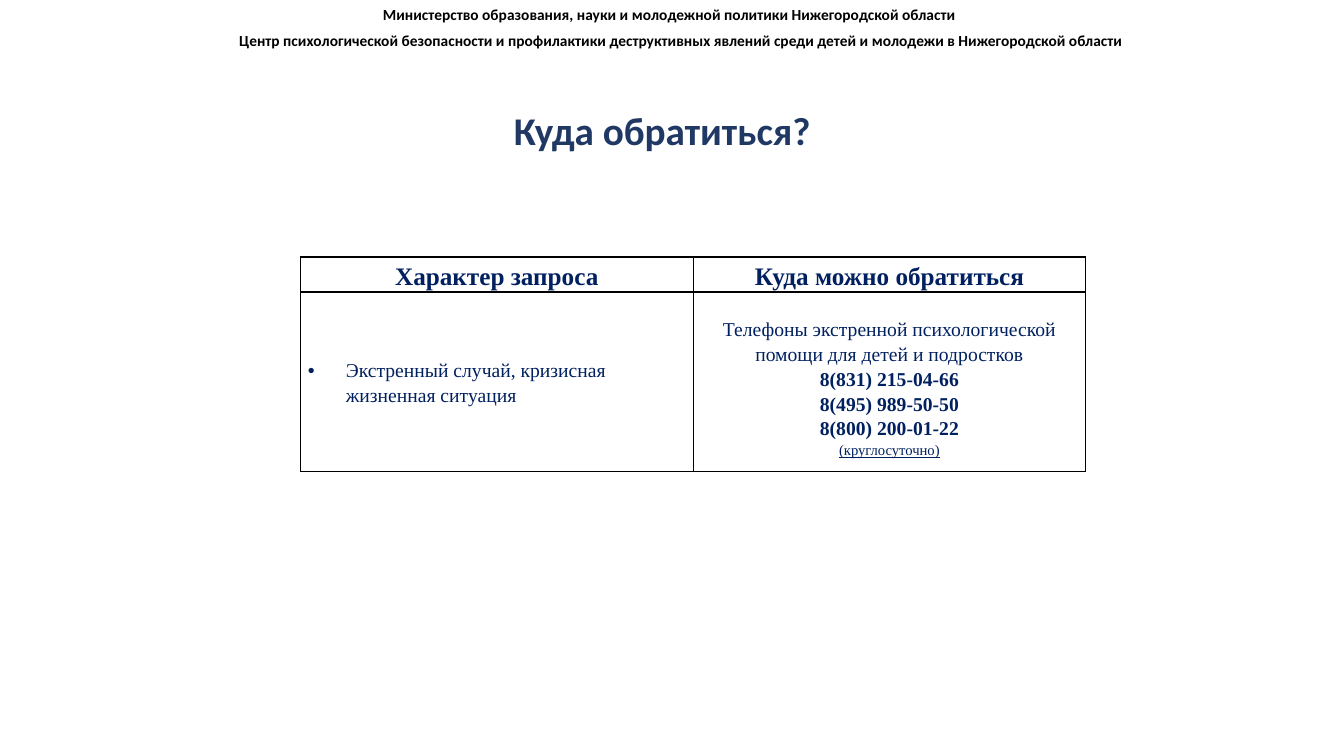
from lxml import etree
from pptx import Presentation
from pptx.dml.color import RGBColor
from pptx.enum.text import MSO_ANCHOR as Anchor, MSO_AUTO_SIZE as AutoSize, PP_ALIGN as Align
from pptx.oxml.ns import qn
from pptx.util import Pt

NAVY = "002060"
TITLE_BLUE = "203864"
BLACK = "000000"


def colour(hex_code):
    return RGBColor.from_string(hex_code)


def write(paragraph, text, font="Calibri", size=11, color=BLACK, bold=False,
          underline=False, align=None, spacing=None):
    paragraph.alignment = align
    paragraph.line_spacing = spacing
    run = paragraph.add_run()
    run.text = text
    run.font.name = font
    run.font.size = Pt(size)
    run.font.bold = bold
    run.font.underline = underline
    run.font.color.rgb = colour(color)


def write_cell(paragraph, text, size=14, align=Align.CENTER, **style):
    write(paragraph, text, font="Times New Roman", size=size, color=NAVY,
          align=align, spacing=1.15, **style)


def add_bullet(paragraph, indent):
    """Give the paragraph a round bullet with a hanging indent in points."""
    props = paragraph._p.get_or_add_pPr()
    props.set("marL", str(Pt(indent)))
    props.set("indent", str(-Pt(indent)))
    etree.SubElement(props, qn("a:buFont"), typeface="Arial")
    etree.SubElement(props, qn("a:buChar"), char="•")


def outline_cell(cell, color=BLACK, width=1):
    props = cell._tc.get_or_add_tcPr()
    for place, side in enumerate(("lnL", "lnR", "lnT", "lnB")):
        line = etree.Element(qn(f"a:{side}"), w=str(Pt(width)))
        fill = etree.SubElement(line, qn("a:solidFill"))
        etree.SubElement(fill, qn("a:srgbClr"), val=color)
        props.insert(place, line)


def add_header_line(slide, text, left, top, width, height):
    box = slide.shapes.add_textbox(Pt(left), Pt(top), Pt(width), Pt(height))
    box.text_frame.word_wrap = True
    box.text_frame.auto_size = AutoSize.SHAPE_TO_FIT_TEXT
    write(box.text_frame.paragraphs[0], text, bold=True)


def add_title(slide, text, left, top, width, height):
    title = slide.shapes.title
    title.left, title.top, title.width, title.height = map(Pt, (left, top, width, height))
    frame = title.text_frame
    frame.word_wrap = False
    frame.auto_size = AutoSize.NONE
    frame.vertical_anchor = Anchor.TOP
    write(frame.paragraphs[0], text, size=28, color=TITLE_BLUE, bold=True, align=Align.CENTER)


def add_contacts(slide, left, top, width, height, heading_height=25):
    table = slide.shapes.add_table(2, 2, Pt(left), Pt(top), Pt(width), Pt(height)).table
    table.first_row = table.horz_banding = False
    for column in table.columns:
        column.width = Pt(width / 2)
    table.rows[0].height = Pt(heading_height)
    table.rows[1].height = Pt(height - heading_height)
    for cell in table.iter_cells():
        cell.fill.background()
        outline_cell(cell)
        cell.vertical_anchor = Anchor.MIDDLE
        cell.margin_left = cell.margin_right = Pt(5.4)
        cell.margin_top = cell.margin_bottom = 0

    for column, heading in enumerate(("Характер запроса", "Куда можно обратиться")):
        write_cell(table.cell(0, column).text_frame.paragraphs[0], heading, size=18, bold=True)

    request = table.cell(1, 0).text_frame.paragraphs[0]
    add_bullet(request, 27)
    write_cell(request, "Экстренный случай, кризисная жизненная ситуация", align=Align.LEFT)

    phones = table.cell(1, 1)
    phones.vertical_anchor = Anchor.TOP
    phones.margin_top = Pt(17)
    frame = phones.text_frame
    write_cell(frame.paragraphs[0],
               "Телефоны экстренной психологической помощи для детей и подростков")
    for number in ("8(831) 215-04-66", "8(495) 989-50-50", "8(800) 200-01-22"):
        write_cell(frame.add_paragraph(), number, bold=True)
    write_cell(frame.add_paragraph(), "(круглосуточно)", size=10.5, underline=True)


def main():
    deck = Presentation()
    deck.slide_width, deck.slide_height = Pt(960), Pt(540)
    slide = deck.slides.add_slide(deck.slide_layouts[5])
    add_title(slide, "Куда обратиться?", 358.5, 72, 229, 41)
    add_header_line(slide, "Министерство образования, науки и молодежной политики "
                    "Нижегородской области", 266.4, 0, 599, 21)
    add_header_line(slide, "Центр психологической безопасности и профилактики деструктивных "
                    "явлений среди детей и молодежи в Нижегородской области",
                    163.8, 18.7, 704, 21)
    add_contacts(slide, 214.6, 183.6, 561, 153)
    deck.save("out.pptx")


if __name__ == "__main__":
    main()
